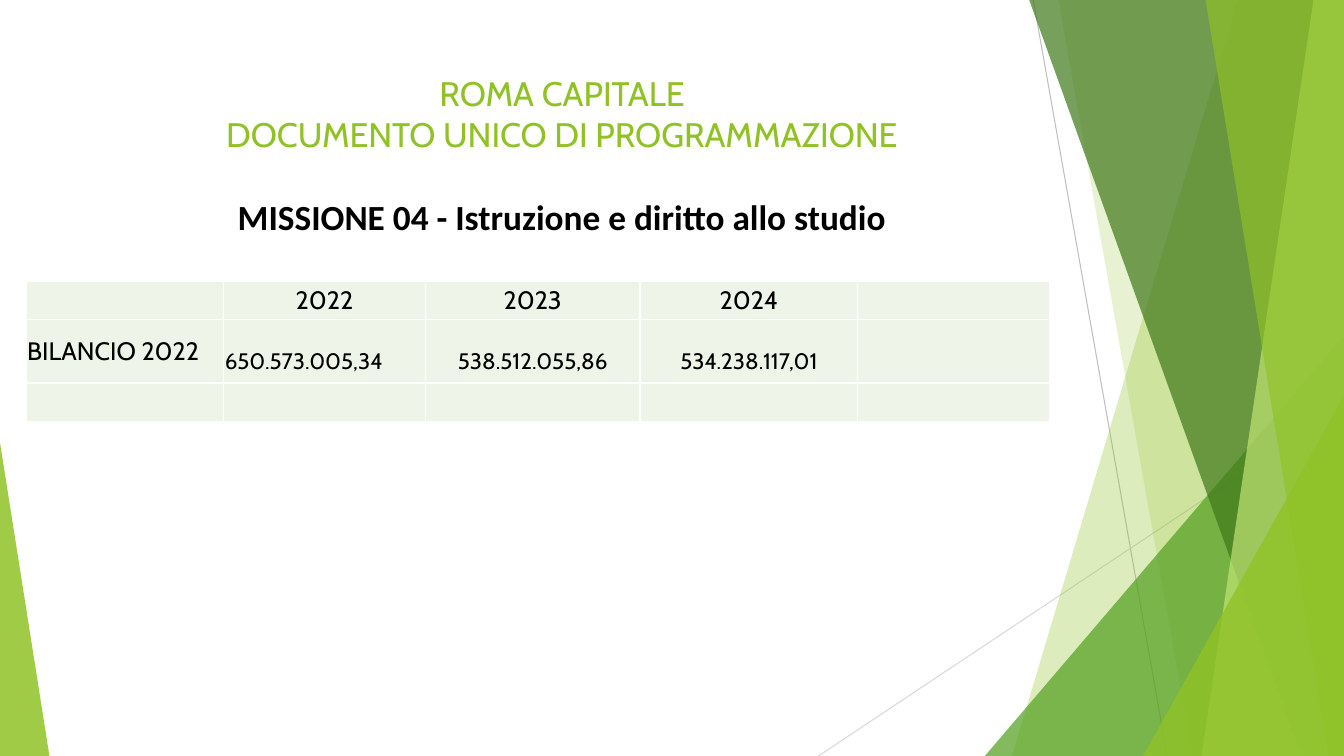
"""Build the budget slide for Mission 04, laid out in percent of the slide's size."""
from dataclasses import dataclass

from lxml import etree
from pptx import Presentation
from pptx import util as u
from pptx.dml.color import RGBColor
from pptx.enum import shapes, text
from pptx.oxml.ns import qn


@dataclass(frozen=True)
class Theme:
    lime: str = "90C226"
    green: str = "54A021"
    forest: str = "3F7819"
    pale: str = "C0E474"
    cell: str = "EEF4E8"
    white: str = "FFFFFF"
    black: str = "000000"
    dark_rule: str = "BFBFBF"
    light_rule: str = "D9D9D9"
    body_font: str = "Cabin"
    mission_font: str = "Calibri"
    title_size: float = 24.3
    mission_size: float = 25.2
    label_size: float = 18
    amount_size: float = 16


THEME = Theme()
WIDTH, HEIGHT = u.Inches(13.33), u.Inches(7.5)
COLUMNS = (14.7, 15, 15.98, 16.2, 14.25)
ROWS = (5.07, 8.4, 5.07)
YEARS = ("2022", "2023", "2024")
AMOUNTS = ("650.573.005,34", "538.512.055,86", "534.238.117,01")


def across(share):
    return round(WIDTH * share / 100)


def down(share):
    return round(HEIGHT * share / 100)


def write(para, words, size=THEME.label_size, font=THEME.body_font,
          color=THEME.black, bold=False, align=text.PP_ALIGN.CENTER, before=0):
    para.alignment = align
    para.space_before = u.Pt(before)
    span = para.add_run()
    span.text = words
    span.font.size = u.Pt(size)
    span.font.name = font
    span.font.bold = bold
    span.font.color.rgb = RGBColor.from_string(color)


def tint(shape, color, opacity):
    shape.shadow.inherit = False
    shape.line.fill.background()
    shape.fill.solid()
    shape.fill.fore_color.rgb = RGBColor.from_string(color)
    swatch = shape.element.spPr.find(qn("a:solidFill")).find(qn("a:srgbClr"))
    etree.SubElement(swatch, qn("a:alpha"), val=str(opacity * 1000))


def add_rule(page, start, end, color):
    rule = page.shapes.add_connector(
        shapes.MSO_CONNECTOR.STRAIGHT,
        across(start[0]), down(start[1]), across(end[0]), down(end[1]))
    rule.line.color.rgb = RGBColor.from_string(color)
    rule.line.width = u.Pt(0.75)
    etree.SubElement(rule.element.spPr, qn("a:effectLst"))


def add_band(page, top_left, bottom_left, color, opacity):
    builder = page.shapes.build_freeform(across(top_left), 0, scale=1.0)
    builder.add_line_segments(
        [(WIDTH, 0), (WIDTH, HEIGHT), (across(bottom_left), HEIGHT)], close=True)
    tint(builder.convert_to_shape(), color, opacity)


def add_corner(page, left, top, width, apex, color, opacity):
    corner = page.shapes.add_shape(
        shapes.MSO_SHAPE.ISOSCELES_TRIANGLE,
        across(left), down(top), across(width), down(100 - top))
    corner.adjustments[0] = apex
    tint(corner, color, opacity)


def add_backdrop(page):
    add_rule(page, (76.88, 0), (86.85, 100), THEME.dark_rule)
    add_rule(page, (100, 53.73), (60.9, 100), THEME.light_rule)
    add_band(page, 92.1, 75.3, THEME.lime, 30)
    add_band(page, 78.75, 88.73, THEME.lime, 20)
    add_corner(page, 73.28, 44.4, 26.72, 1, THEME.green, 72)
    add_band(page, 76.58, 96.83, THEME.forest, 70)
    add_band(page, 97.73, 89.4, THEME.pale, 70)
    add_band(page, 89.7, 98.85, THEME.lime, 65)
    add_corner(page, 85.05, 52.4, 14.95, 1, THEME.lime, 80)
    add_corner(page, 0, 58.53, 3.68, 0, THEME.lime, 85)


def fill_title(page):
    title = page.shapes.title
    title.element.getparent().append(title.element)
    title.left, title.top = across(5.55), down(8.93)
    title.width, title.height = across(72.53), down(28.27)
    frame = title.text_frame
    frame.word_wrap = True
    frame.auto_size = text.MSO_AUTO_SIZE.NONE
    frame.vertical_anchor = text.MSO_ANCHOR.TOP
    heading = dict(size=THEME.title_size, color=THEME.lime)
    write(frame.paragraphs[0], "ROMA CAPITALE", **heading)
    write(frame.add_paragraph(), "DOCUMENTO UNICO DI PROGRAMMAZIONE", **heading)
    write(frame.add_paragraph(), "MISSIONE 04 - Istruzione e diritto allo studio",
          size=THEME.mission_size, font=THEME.mission_font, bold=True, before=29)


def style_cell(cell):
    cell.margin_left = cell.margin_right = cell.margin_top = u.Inches(0.01)
    cell.margin_bottom = 0
    cell.vertical_anchor = text.MSO_ANCHOR.MIDDLE
    properties = cell._tc.get_or_add_tcPr()
    for side in ("a:lnL", "a:lnR", "a:lnT", "a:lnB"):
        border = etree.SubElement(properties, qn(side), w=str(u.Pt(1)))
        paint = etree.SubElement(border, qn("a:solidFill"))
        etree.SubElement(paint, qn("a:srgbClr"), val=THEME.white)
    cell.fill.solid()
    cell.fill.fore_color.rgb = RGBColor.from_string(THEME.cell)


def add_budget(page):
    table = page.shapes.add_table(
        len(ROWS), len(COLUMNS), across(1.95), down(37.2),
        across(sum(COLUMNS)), down(sum(ROWS))).table
    for column, share in zip(table.columns, COLUMNS):
        column.width = across(share)
    for row, share in zip(table.rows, ROWS):
        row.height = down(share)
    for cell in table.iter_cells():
        style_cell(cell)
    left, center = text.PP_ALIGN.LEFT, text.PP_ALIGN.CENTER
    write(table.cell(1, 0).text_frame.paragraphs[0], "BILANCIO 2022", align=left)
    for index, (year, amount) in enumerate(zip(YEARS, AMOUNTS), start=1):
        write(table.cell(0, index).text_frame.paragraphs[0], year)
        cell = table.cell(1, index)
        cell.vertical_anchor = text.MSO_ANCHOR.TOP
        cell.margin_top = u.Inches(0.28)
        write(cell.text_frame.paragraphs[0], amount, size=THEME.amount_size,
              align=left if index == 1 else center)


def main():
    deck = Presentation()
    deck.slide_width, deck.slide_height = WIDTH, HEIGHT
    page = deck.slides.add_slide(deck.slide_layouts.get_by_name("Title Only"))
    add_backdrop(page)
    fill_title(page)
    add_budget(page)
    deck.save("out.pptx")


if __name__ == "__main__":
    main()
